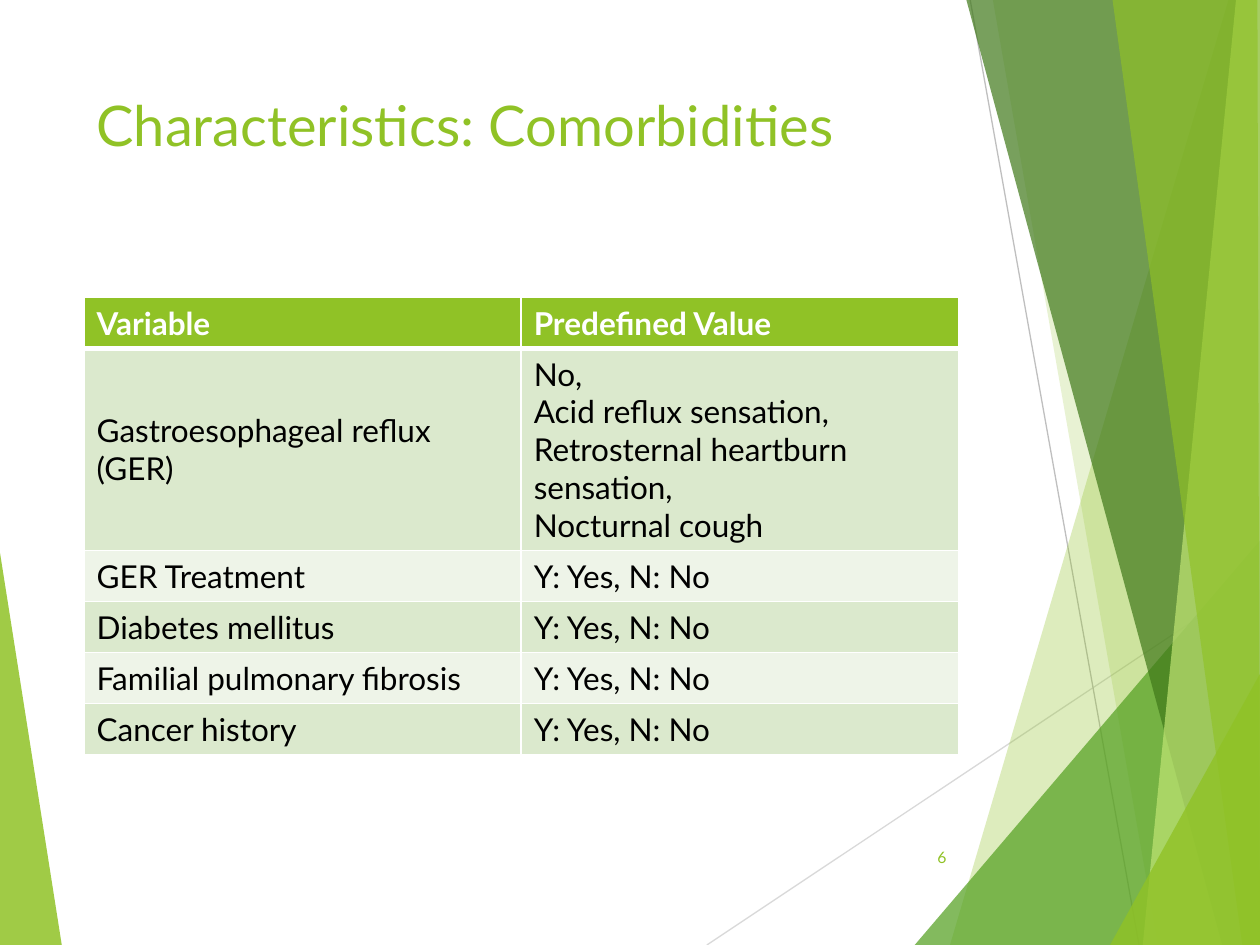
"""Build the comorbidities slide: a two-column table beside layered green facets."""
from lxml import etree
from pptx import Presentation
from pptx import util as u
from pptx.dml.color import RGBColor
from pptx.enum import shapes, text
from pptx.oxml import ns

TITLE = "Characteristics: Comorbidities"
PAGE_NUMBER = "6"
YES_NO = ["Y: Yes, N: No"]
ROWS = [
    ("Variable", ["Predefined Value"]),
    ("Gastroesophageal reflux (GER)",
     ["No,", "Acid reflux sensation, Retrosternal heartburn sensation,", "Nocturnal cough"]),
    ("GER Treatment", YES_NO),
    ("Diabetes mellitus", YES_NO),
    ("Familial pulmonary fibrosis", YES_NO),
    ("Cancer history", YES_NO),
]
THEME = {
    "font": "Lato",
    "green": "90C226", "leaf": "54A021", "forest": "3F7819", "lime": "C0E474",
    "white": "FFFFFF", "black": "000000", "bands": ("DBE9CD", "EEF4E8"),
    "long_line": "D9D9D9", "steep_line": "BFBFBF",
    "title_size": 32, "table_size": 18, "number_size": 9,
    "line": 0.75, "border": 1, "header_border": 3,
}
WEDGE = ("green", 85, [(0, 58.5), (4.9, 100), (0, 100)])
LINES = [("long_line", (56.1, 100), (100, 61)), ("steep_line", (77, 0), (90.4, 100))]
FACETS = [
    ("green", 30, [(97.5, 0), (75.4, 100), (100, 100), (100, 0)]),
    ("green", 20, [(78.8, 0), (91.9, 100), (100, 100), (100, 0)]),
    ("leaf", 72, [(72.6, 100), (100, 57.2), (100, 100)]),
    ("forest", 70, [(76.7, 0), (97, 100), (100, 100), (100, 0)]),
    ("lime", 70, [(98.1, 0), (90.7, 100), (100, 100), (100, 0)]),
    ("green", 65, [(88.3, 0), (98.6, 100), (100, 100), (99.8, 0)]),
    ("green", 80, [(88.1, 100), (100, 71.3), (100, 100)]),
]
WIDTH, HEIGHT = u.Inches(10), u.Inches(7.5)
LEFT, CONTENT_WIDTH = 6.67, 69.4
TITLE_BOX = (LEFT, 8.9, CONTENT_WIDTH, 19.2)
NUMBER_BOX = (70.5, 88.1, 5.6, 5.3)
TABLE_TOP, ROW_HEIGHT, TALL_ROW, TALL_HEIGHT = 31.5, 5.4, 1, 21.2


def place(x, y):
    """Turn percentages of the slide into a point."""
    return int(WIDTH * x / 100), int(HEIGHT * y / 100)


def box(x, y, width, height):
    """Turn a percentage box into left, top, width and height."""
    return place(x, y) + place(width, height)


def add_facet(slide, color, opacity, points):
    """Draw one translucent polygon."""
    start, *rest = [place(*point) for point in points]
    builder = slide.shapes.build_freeform(*start, scale=1.0)
    builder.add_line_segments(rest, close=True)
    shape = builder.convert_to_shape()
    shape.shadow.inherit = False
    shape.line.fill.background()
    shape.fill.solid()
    shape.fill.fore_color.rgb = RGBColor.from_string(THEME[color])
    color_element = shape.fill._xPr.find(".//" + ns.qn("a:srgbClr"))
    etree.SubElement(color_element, ns.qn("a:alpha"), val=str(opacity * 1000))


def add_line(slide, color, start, end):
    """Draw one thin straight line."""
    line = slide.shapes.add_connector(shapes.MSO_CONNECTOR.STRAIGHT, *place(*start), *place(*end))
    line.line.color.rgb = RGBColor.from_string(THEME[color])
    line.line.width = u.Pt(THEME["line"])
    etree.SubElement(line._element.spPr, ns.qn("a:effectLst"))


def write(frame, paragraphs, size, color, bold=False, align=text.PP_ALIGN.LEFT):
    """Fill a text frame with formatted paragraphs."""
    frame.word_wrap = True
    frame.text = "\n".join(paragraphs)
    formats = {"name": THEME["font"], "size": u.Pt(THEME[size]), "bold": bold}
    for paragraph in frame.paragraphs:
        paragraph.alignment = align
        font = paragraph.runs[0].font
        for name, value in formats.items():
            setattr(font, name, value)
        font.color.rgb = RGBColor.from_string(THEME[color])


def set_borders(cell, row):
    """Give a cell white borders, heavier below the header."""
    heavy = {(0, "B"), (1, "T")}
    for index, side in enumerate("LRTB"):
        width = THEME["header_border" if (row, side) in heavy else "border"]
        border = etree.Element(ns.qn(f"a:ln{side}"), w=str(u.Pt(width)))
        fill = etree.SubElement(border, ns.qn("a:solidFill"))
        etree.SubElement(fill, ns.qn("a:srgbClr"), val=THEME["white"])
        cell._tc.get_or_add_tcPr().insert(index, border)


def add_table(slide):
    """Draw the table of variables and their values."""
    heights = [TALL_HEIGHT if row == TALL_ROW else ROW_HEIGHT for row in range(len(ROWS))]
    area = box(LEFT, TABLE_TOP, CONTENT_WIDTH, sum(heights))
    table = slide.shapes.add_table(len(ROWS), 2, *area).table
    for row, (variable, values) in enumerate(ROWS):
        table.rows[row].height = place(0, heights[row])[1]
        header = row == 0
        fill = THEME["green"] if header else THEME["bands"][(row - 1) % 2]
        for column, paragraphs in enumerate(([variable], values)):
            cell = table.cell(row, column)
            cell.fill.solid()
            cell.fill.fore_color.rgb = RGBColor.from_string(fill)
            cell.vertical_anchor = text.MSO_ANCHOR.TOP if header else text.MSO_ANCHOR.MIDDLE
            write(cell.text_frame, paragraphs, "table_size", "white" if header else "black", header)
            set_borders(cell, row)


def main():
    """Assemble and save the slide."""
    presentation = Presentation()
    presentation.slide_width, presentation.slide_height = WIDTH, HEIGHT
    slide = presentation.slides.add_slide(presentation.slide_layouts[6])
    add_facet(slide, *WEDGE)
    for line in LINES:
        add_line(slide, *line)
    for facet in FACETS:
        add_facet(slide, *facet)
    title = slide.shapes.add_textbox(*box(*TITLE_BOX))
    write(title.text_frame, [TITLE], "title_size", "green")
    add_table(slide)
    number = slide.shapes.add_textbox(*box(*NUMBER_BOX))
    number.text_frame.vertical_anchor = text.MSO_ANCHOR.MIDDLE
    write(number.text_frame, [PAGE_NUMBER], "number_size", "green", align=text.PP_ALIGN.RIGHT)
    presentation.save("out.pptx")


if __name__ == "__main__":
    main()
